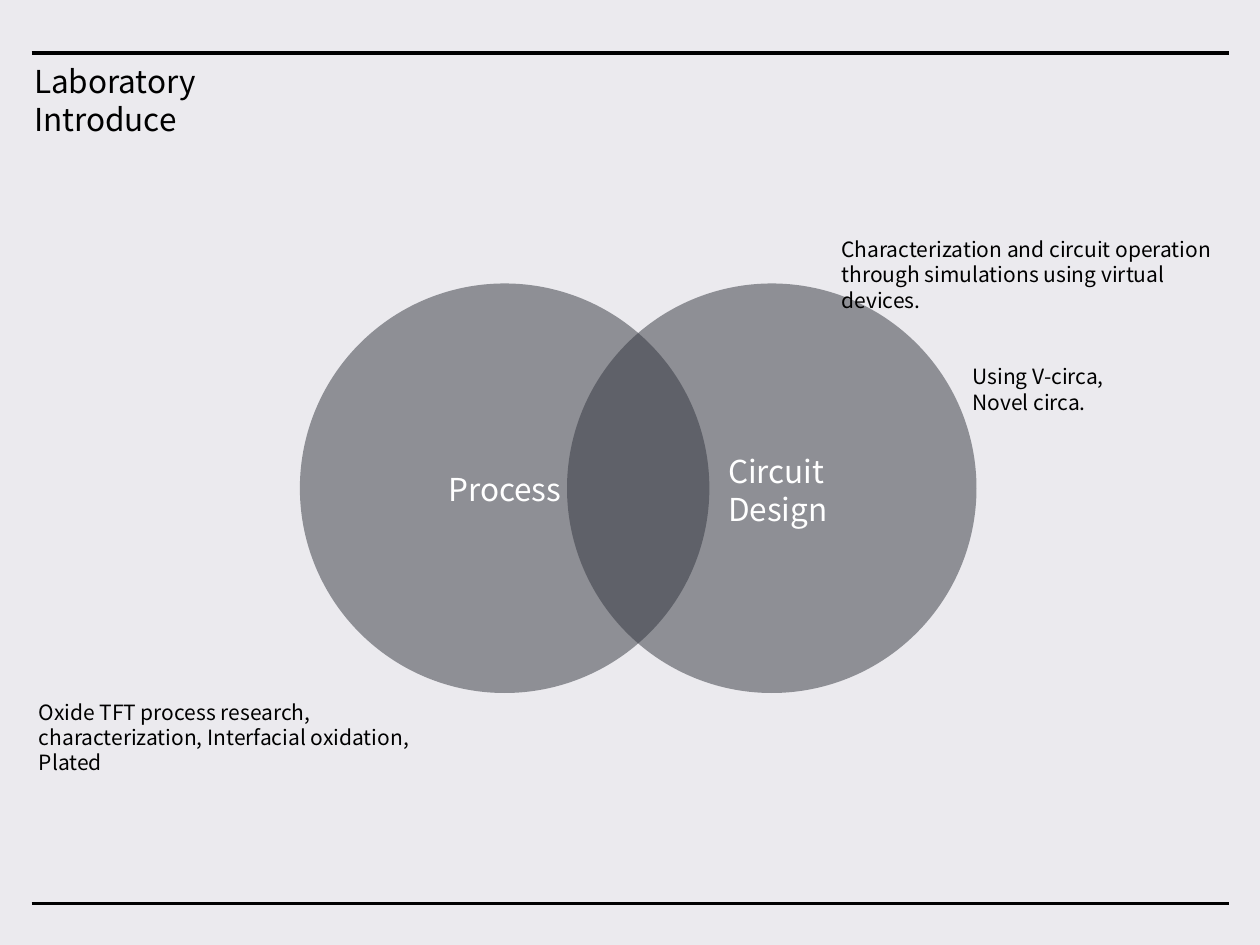
from lxml.etree import SubElement
from pptx import Presentation
from pptx.dml.color import RGBColor
from pptx.enum.shapes import MSO_CONNECTOR as Conn, MSO_SHAPE as Shape
from pptx.enum.text import MSO_ANCHOR as Anchor, MSO_AUTO_SIZE as Fit, PP_ALIGN as Align
from pptx.oxml.ns import qn
from pptx.util import Inches, Pt

FONT = "Noto Sans CJK KR"
HUES = {"back": "EBEAEE", "ink": "000000", "disc": "32353E", "pale": "FFFFFF"}


def hue(name):
    return RGBColor.from_string(HUES[name])


def place(shape, left, top, width, height):
    shape.left, shape.top = Inches(left), Inches(top)
    shape.width, shape.height = Inches(width), Inches(height)


def write(shape, text, size=12, color="ink"):
    frame = shape.text_frame
    frame.word_wrap = True
    frame.auto_size = Fit.SHAPE_TO_FIT_TEXT
    frame.vertical_anchor = Anchor.TOP
    frame.text = text
    for para in frame.paragraphs:
        para.alignment = Align.LEFT
        para.line_spacing = 1.0
        para.space_before = Pt(0)
        for run in para.runs:
            font = run.font
            font.name, font.size = FONT, Pt(size)
            font.color.rgb = hue(color)
            props = run._r.get_or_add_rPr()
            SubElement(props, qn("a:ea")).set("typeface", FONT)


def add_note(slide, box, text, **form):
    shape = slide.shapes.add_textbox(*map(Inches, box))
    write(shape, text, **form)


def add_rule(slide, top):
    line = slide.shapes.add_connector(
        Conn.STRAIGHT, Inches(0.25), Inches(top), Inches(9.75), Inches(top))
    line.line.color.rgb = hue("ink")
    line.line.width = Pt(2)
    SubElement(line._element.spPr, qn("a:effectLst"))


def add_disc(slide, left):
    disc = slide.shapes.add_shape(
        Shape.OVAL, Inches(left), Inches(2.25), Inches(3.25), Inches(3.25))
    disc.shadow.inherit = False
    disc.fill.solid()
    disc.fill.fore_color.rgb = hue("disc")
    disc.line.fill.background()
    shade = disc._element.spPr.find(qn("a:solidFill"))[0]
    SubElement(shade, qn("a:alpha")).set("val", "50000")


def main():
    deck = Presentation()
    deck.slide_width, deck.slide_height = Inches(10), Inches(7.5)
    slide = deck.slides.add_slide(deck.slide_layouts[5])
    slide.background.fill.solid()
    slide.background.fill.fore_color.rgb = hue("back")

    for top in (7.17, 0.42):
        add_rule(slide, top)

    title = slide.shapes.title
    place(title, 0.17, 0.44, 2.65, 0.4)
    write(title, "Laboratory Introduce", size=18)

    for left in (2.38, 4.5):
        add_disc(slide, left)

    add_note(slide, (3.46, 3.68, 1.33, 0.4), "Process", size=18, color="pale")
    add_note(slide, (5.68, 3.54, 1.04, 0.71), "Circuit Design", size=18, color="pale")
    add_note(slide, (6.58, 1.83, 3.42, 0.5),
             "Characterization and circuit operation through simulations using virtual devices.")
    add_note(slide, (7.62, 2.84, 1.33, 0.5), "Using V-circa,\nNovel circa.")
    add_note(slide, (0.21, 5.5, 3.63, 0.5),
             "Oxide TFT process research, characterization, Interfacial oxidation, Plated")

    deck.save("out.pptx")


if __name__ == "__main__":
    main()
